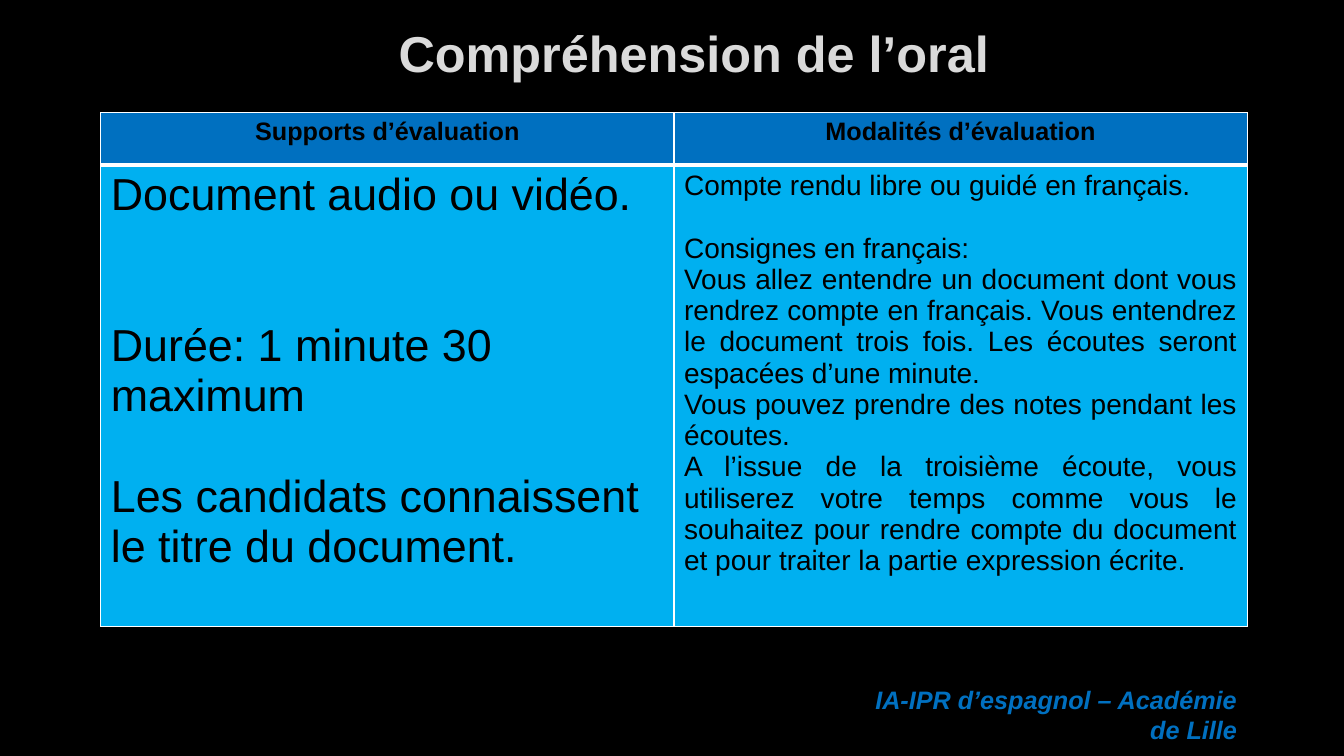
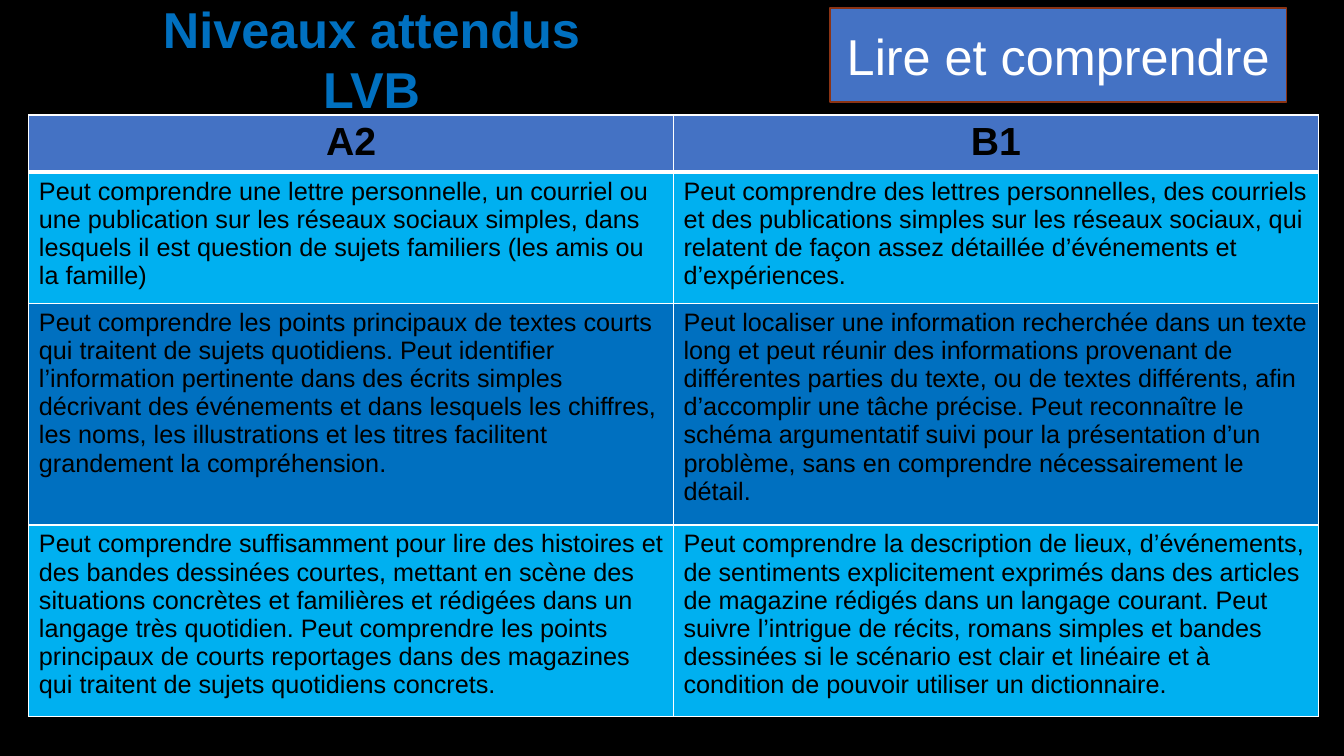
from dataclasses import dataclass
from typing import NamedTuple

from lxml import etree
from pptx import Presentation
from pptx.dml.color import RGBColor
from pptx.enum.shapes import MSO_SHAPE
from pptx.enum.text import MSO_ANCHOR, PP_ALIGN
from pptx.oxml.ns import qn
from pptx.util import Inches, Pt

LEFT, CENTER, RIGHT, JUSTIFY = PP_ALIGN.LEFT, PP_ALIGN.CENTER, PP_ALIGN.RIGHT, PP_ALIGN.JUSTIFY
TOP, MIDDLE = MSO_ANCHOR.TOP, MSO_ANCHOR.MIDDLE
RECTANGLE = MSO_SHAPE.RECTANGLE
SLIDE_WIDTH, SLIDE_HEIGHT = Inches(13.333), Inches(7.5)


@dataclass(frozen=True)
class Theme:
    font: str = "Arial"
    black: str = "000000"
    white: str = "FFFFFF"
    pale: str = "DADADA"
    blue: str = "0070C0"
    sky: str = "00B0F0"
    accent: str = "4472C4"
    rust: str = "8B3314"
    title: int = 36
    large: int = 32
    heading: int = 28
    medium: int = 20
    small: int = 18
    line_height: float = 1.12  # height of one line, in shares of the type size
    thin: float = 1
    thick: float = 3


THEME = Theme()


class Frame(NamedTuple):
    """Place and size in percent of the slide's width and height."""
    left: float
    top: float
    width: float
    height: float


class Style(NamedTuple):
    size: int
    color: str = THEME.black
    bold: bool = False
    italic: bool = False
    align: PP_ALIGN = LEFT


class Para(NamedTuple):
    text: str
    gap: int = 0  # free lines above the paragraph


class Cell(NamedTuple):
    paras: list[Para]
    style: Style
    fill: str


class Row(NamedTuple):
    height: float  # least height, percent of the slide's height
    cells: list[Cell]


def across(share: float) -> int:
    return round(SLIDE_WIDTH * share / 100)


def down(share: float) -> int:
    return round(SLIDE_HEIGHT * share / 100)


def place(frame: Frame) -> tuple[int, int, int, int]:
    return across(frame.left), down(frame.top), across(frame.width), down(frame.height)


# Text
def write(text_frame, paras: list[Para], style: Style) -> None:
    text_frame.word_wrap = True
    for index, item in enumerate(paras):
        para = text_frame.add_paragraph() if index else text_frame.paragraphs[0]
        para.text = item.text
        para.alignment = style.align
        para.space_before = Pt(item.gap * style.size * THEME.line_height)
        for span in para.runs:
            font = span.font
            font.name, font.size = THEME.font, Pt(style.size)
            font.bold, font.italic = style.bold, style.italic
            font.color.rgb = RGBColor.from_string(style.color)


def add_text(page, frame: Frame, text: str, style: Style, anchor: MSO_ANCHOR = TOP) -> None:
    box = page.shapes.add_textbox(*place(frame))
    box.text_frame.vertical_anchor = anchor
    write(box.text_frame, [Para(text)], style)


def add_title(page, frame: Frame, text: str, color: str) -> None:
    add_text(page, frame, text, Style(THEME.title, color, bold=True, align=CENTER), MIDDLE)


def add_badge(page, frame: Frame, text: str) -> None:
    badge = page.shapes.add_shape(RECTANGLE, *place(frame))
    badge.shadow.inherit = False
    badge.fill.solid()
    badge.fill.fore_color.rgb = RGBColor.from_string(THEME.accent)
    badge.line.color.rgb = RGBColor.from_string(THEME.rust)
    badge.line.width = Pt(1.25)
    badge.text_frame.vertical_anchor = MIDDLE
    write(badge.text_frame, [Para(text)], Style(THEME.title, THEME.white, align=CENTER))


# Tables
def add_borders(cell, row_index: int) -> None:
    """White rules, with a thick one between the header and the body."""
    top = THEME.thick if row_index == 1 else THEME.thin
    bottom = THEME.thick if row_index == 0 else THEME.thin
    properties = cell._tc.get_or_add_tcPr()
    for side, width in (("L", THEME.thin), ("R", THEME.thin), ("T", top), ("B", bottom)):
        line = etree.SubElement(properties, qn(f"a:ln{side}"), w=str(Pt(width)))
        solid = etree.SubElement(line, qn("a:solidFill"))
        etree.SubElement(solid, qn("a:srgbClr"), val=THEME.white)


def add_grid(page, frame: Frame, rows: list[Row]) -> None:
    """Rows grow with their text; the frame keeps its own height."""
    columns = len(rows[0].cells)
    holder = page.shapes.add_table(len(rows), columns, *place(frame))
    table = holder.table
    table.first_row = table.horz_banding = False
    for column in table.columns:
        column.width = across(frame.width / columns)
    for row_index, row in enumerate(rows):
        table.rows[row_index].height = down(row.height)
        for column_index, content in enumerate(row.cells):
            cell = table.cell(row_index, column_index)
            add_borders(cell, row_index)
            cell.fill.solid()
            cell.fill.fore_color.rgb = RGBColor.from_string(content.fill)
            write(cell.text_frame, content.paras, content.style)
    holder.height = down(frame.height)


def plain_row(height: float, texts: tuple[str, ...], style: Style, fill: str) -> Row:
    return Row(height, [Cell([Para(text)], style, fill) for text in texts])


# Pages
def add_page(deck):
    page = deck.slides.add_slide(deck.slide_layouts[6])
    page.background.fill.solid()
    page.background.fill.fore_color.rgb = RGBColor.from_string(THEME.black)
    return page


SUPPORTS = [
    Para("Document audio ou vidéo."),
    Para("Durée: 1 minute 30 maximum", gap=2),
    Para("Les candidats connaissent le titre du document.", gap=1),
]
METHODS = [
    Para("Compte rendu libre ou guidé en français."),
    Para("Consignes en français:", gap=1),
    Para("Vous allez entendre un document dont vous rendrez compte en français. "
         "Vous entendrez le document trois fois. Les écoutes seront espacées d’une minute."),
    Para("Vous pouvez prendre des notes pendant les écoutes."),
    Para("A l’issue de la troisième écoute, vous utiliserez votre temps comme vous le "
         "souhaitez pour rendre compte du document et pour traiter la partie expression écrite."),
]
LEVELS = [
    (THEME.sky, (
        "Peut comprendre une lettre personnelle, un courriel ou une publication sur les "
        "réseaux sociaux simples, dans lesquels il est question de sujets familiers "
        "(les amis ou la famille)",
        "Peut comprendre des lettres personnelles, des courriels et des publications simples "
        "sur les réseaux sociaux, qui relatent de façon assez détaillée d’événements et "
        "d’expériences.")),
    (THEME.blue, (
        "Peut comprendre les points principaux de textes courts qui traitent de sujets "
        "quotidiens. Peut identifier l’information pertinente dans des écrits simples "
        "décrivant des événements et dans lesquels les chiffres, les noms, les illustrations "
        "et les titres facilitent grandement la compréhension.",
        "Peut localiser une information recherchée dans un texte long et peut réunir des "
        "informations provenant de différentes parties du texte, ou de textes différents, "
        "afin d’accomplir une tâche précise. Peut reconnaître le schéma argumentatif suivi "
        "pour la présentation d’un problème, sans en comprendre nécessairement le détail.")),
    (THEME.sky, (
        "Peut comprendre suffisamment pour lire des histoires et des bandes dessinées "
        "courtes, mettant en scène des situations concrètes et familières et rédigées dans "
        "un langage très quotidien. Peut comprendre les points principaux de courts "
        "reportages dans des magazines qui traitent de sujets quotidiens concrets.",
        "Peut comprendre la description de lieux, d’événements, de sentiments explicitement "
        "exprimés dans des articles de magazine rédigés dans un langage courant. Peut suivre "
        "l’intrigue de récits, romans simples et bandes dessinées si le scénario est clair et "
        "linéaire et à condition de pouvoir utiliser un dictionnaire.")),
]


def build_listening(deck) -> None:
    page = add_page(deck)
    add_title(page, Frame(12.6, 2.8, 78.08, 8.27), "Compréhension de l’oral", THEME.pale)
    header = Style(THEME.small, bold=True, align=CENTER)
    add_grid(page, Frame(7.5, 14.93, 85.3, 68), [
        plain_row(6.93, ("Supports d’évaluation", "Modalités d’évaluation"), header, THEME.blue),
        Row(61.07, [
            Cell(SUPPORTS, Style(THEME.large), THEME.sky),
            Cell(METHODS, Style(THEME.medium, align=JUSTIFY), THEME.sky),
        ]),
    ])
    footer = Style(THEME.small, THEME.blue, bold=True, italic=True, align=RIGHT)
    add_text(page, Frame(61.8, 89.87, 30.98, 5.33),
             "IA-IPR d’espagnol – Académie de Lille", footer)


def build_reading(deck) -> None:
    page = add_page(deck)
    add_grid(page, Frame(2.15, 15.2, 95.93, 75.6), [
        plain_row(5.87, ("A2", "B1"), Style(THEME.heading, bold=True, align=CENTER),
                  THEME.accent),
        *(plain_row(8.8, texts, Style(THEME.small), fill) for fill, texts in LEVELS),
    ])
    add_title(page, Frame(7.73, 2.4, 39.83, 10.67), "Niveaux attendus LVB", THEME.blue)
    add_badge(page, Frame(61.75, 1.1, 33.98, 12.4), "Lire et comprendre")


def main() -> None:
    deck = Presentation()
    deck.slide_width, deck.slide_height = SLIDE_WIDTH, SLIDE_HEIGHT
    build_listening(deck)
    build_reading(deck)
    deck.save("out.pptx")


if __name__ == "__main__":
    main()
